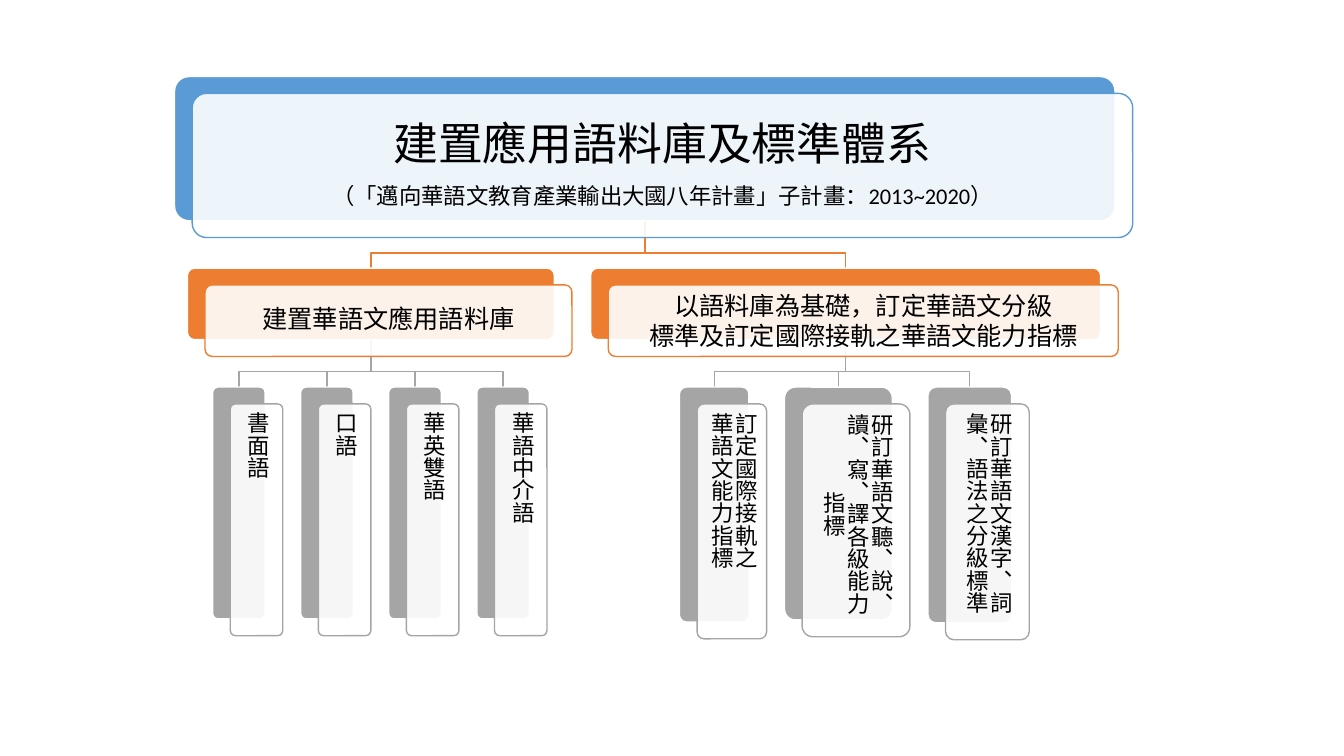
from pptx import Presentation
from pptx.dml.color import RGBColor
from pptx.enum.shapes import MSO_SHAPE as Preset
from pptx.enum.text import MSO_ANCHOR as Anchor, PP_ALIGN as Align
from pptx.oxml.ns import qn
from pptx.util import Pt
from lxml.etree import SubElement

BLUE, ORANGE, GRAY, WHITE, BLACK = "5B9BD5", "ED7D31", "A5A5A5", "FFFFFF", "000000"
SHIFT_X, SHIFT_Y = 12.6, 12   # offset of a card's front from its back
LEAF_GAP = 25.4
ELBOW = 23                    # drop from a card to the bend of its branches

TITLE = (124.7, 54.7, 671.8, 103)
TITLE_LINES = [("建置應用語料庫及標準體系", 32),
               ("（「邁向華語文教育產業輸出大國八年計畫」子計畫：2013~2020）", 16)]
LEAF_TOP = 276.5
# Each topic: box, lines, line spacing, left edge of its leaves, leaves as (lines, width, height)
TOPICS = [
    ((133.9, 191.5, 262.1, 51.1), ["建置華語文應用語料庫"], 0.9, 151.9,
     [([text], 37.5, 165.6) for text in ("書面語", "口語", "華英雙語", "華語中介語")]),
    ((421.9, 191.5, 364.3, 51.1),
     ["以語料庫為基礎，訂定華語文分級", "標準及訂定國際接軌之華語文能力指標"], 1.0, 485.3,
     [(["訂定國際接軌之", "華語文能力指標"], 49.7, 167.8),
      (["研訂華語文聽、說、讀、寫、譯各級能力指標"], 77, 166.3),
      (["研訂華語文漢字、詞彙、語法之分級標準"], 59.8, 168.5)]),
]


def color(hex_text):
    return RGBColor.from_string(hex_text)


def apply(target, values):
    for name, value in values.items():
        setattr(target, name, value)


def rounded(page, box, fill, line):
    shape = page.shapes.add_shape(Preset.ROUNDED_RECTANGLE, *map(Pt, box))
    shape.adjustments[0] = 0.1
    shape.shadow.inherit = False
    shape.fill.solid()
    shape.fill.fore_color.rgb = color(fill)
    shape.line.color.rgb = color(line)
    shape.line.width = Pt(1)
    return shape


def card(page, box, lines, accent, spacing=0.9, vertical=False):
    """Draw a coloured back with a white front that carries (text, size) lines."""
    left, top, width, height = box
    rounded(page, box, accent, WHITE)
    front = rounded(page, (left + SHIFT_X, top + SHIFT_Y, width, height), WHITE, accent)
    # Front is slightly see-through
    tint = front.fill._xPr.find(qn("a:solidFill"))[0]
    SubElement(tint, qn("a:alpha"), val="90000")

    frame = front.text_frame
    inset = Pt(0.3 * lines[0][1])
    apply(frame, dict(word_wrap=True, vertical_anchor=Anchor.MIDDLE, margin_left=inset,
                      margin_right=inset, margin_top=inset, margin_bottom=inset))
    if vertical:
        frame._txBody.bodyPr.set("vert", "eaVert")
    for index, (text, size) in enumerate(lines):
        para = frame.add_paragraph() if index else frame.paragraphs[0]
        apply(para, dict(alignment=Align.CENTER, line_spacing=spacing))
        if size > 18:
            para.space_after = Pt(0.35 * size)
        span = para.add_run()
        span.text = text
        apply(span.font, dict(name="Calibri", size=Pt(size)))
        span.font.color.rgb = color(BLACK)


def branch(page, parent, child, accent):
    """Draw a bent line from the bottom of one box to the top of another."""
    start, end = (box[0] + box[2] / 2 for box in (parent, child))
    bottom = parent[1] + parent[3]
    bend = bottom + ELBOW
    pen = page.shapes.build_freeform(Pt(start), Pt(bottom))
    pen.add_line_segments([(Pt(x), Pt(y)) for x, y in
                           ((start, bend), (end, bend), (end, child[1]))], close=False)
    line = pen.convert_to_shape()
    line.shadow.inherit = False
    line.fill.background()
    line.line.color.rgb = color(accent)
    line.line.width = Pt(1)


def topic(page, box, lines, spacing, leaf_left, leaves):
    """Draw a second-level card and the row of vertical cards below it."""
    placed = []
    for texts, width, height in leaves:
        placed.append((texts, (leaf_left, LEAF_TOP, width, height)))
        leaf_left += width + LEAF_GAP
    for _, leaf_box in placed:
        branch(page, box, leaf_box, GRAY)
    card(page, box, [(text, 18) for text in lines], ORANGE, spacing)
    for texts, leaf_box in placed:
        card(page, leaf_box, [(text, 16) for text in texts], GRAY, vertical=True)


def main():
    deck = Presentation()
    apply(deck, dict(slide_width=Pt(960), slide_height=Pt(540)))
    page = deck.slides.add_slide(deck.slide_layouts[6])
    # Branches lie behind the cards
    for box, *_ in TOPICS:
        branch(page, TITLE, box, ORANGE)
    card(page, TITLE, TITLE_LINES, BLUE)
    for parts in TOPICS:
        topic(page, *parts)
    deck.save("out.pptx")


if __name__ == "__main__":
    main()
